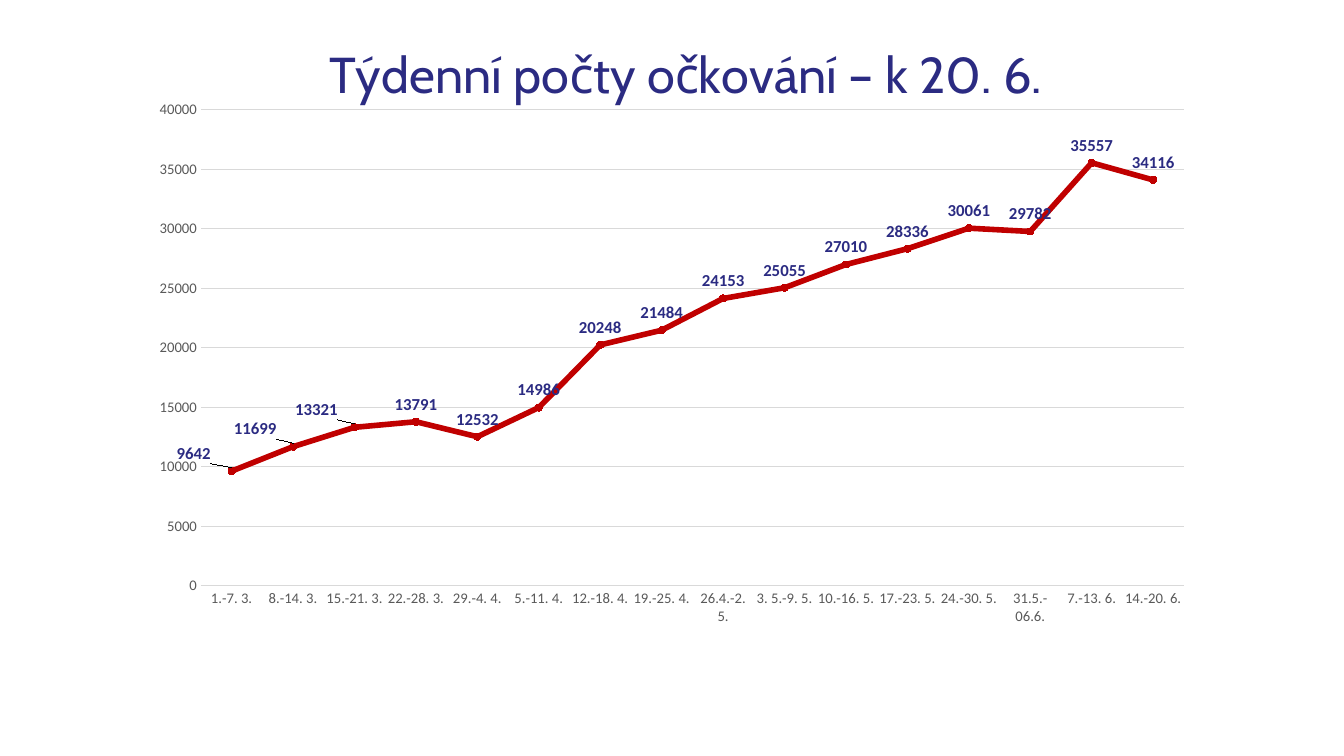
from dataclasses import dataclass

from lxml.etree import SubElement
from pptx import Presentation
from pptx.chart.data import CategoryChartData
from pptx.dml.color import RGBColor
from pptx.enum.chart import XL_CHART_TYPE as ChartType
from pptx.enum.chart import XL_LABEL_POSITION as LabelPosition
from pptx.enum.chart import XL_MARKER_STYLE as MarkerStyle
from pptx.enum.chart import XL_TICK_MARK as TickMark
from pptx.oxml.ns import qn
from pptx.util import Pt


@dataclass(frozen=True)
class Theme:
    """Colours, fonts and type sizes of the deck."""
    navy: RGBColor = RGBColor.from_string("2B2B82")
    red: RGBColor = RGBColor.from_string("C00000")
    grey: RGBColor = RGBColor.from_string("595959")
    rule: RGBColor = RGBColor.from_string("D9D9D9")
    heading_font: str = "Cabin"
    body_font: str = "Calibri"
    title_size: float = 36
    label_size: float = 12
    axis_size: float = 10.5
    rule_width: float = 0.75
    series_width: float = 4


@dataclass(frozen=True)
class Box:
    """A rectangle in px."""
    left: int
    top: int
    width: int
    height: int


THEME = Theme()
PX_PER_INCH = 100.8
PAGE = Box(0, 0, 1344, 756)
CHART_BOX = Box(138, 0, 1067, 639)
PLOT_BOX = Box(63, 110, 983, 476)
TITLE_LEFT, TITLE_TOP = 182, 30
LABEL_SHIFT = -38
SHIFTED_POINTS = range(3)

TITLE = "Týdenní počty očkování – k 20. 6."
WEEKLY_COUNTS = {
    "1.-7. 3.": 9642, "8.-14. 3.": 11699, "15.-21. 3.": 13321,
    "22.-28. 3.": 13791, "29.-4. 4.": 12532, "5.-11. 4.": 14986,
    "12.-18. 4.": 20248, "19.-25. 4.": 21484, "26.4.-2. 5.": 24153,
    "3. 5.-9. 5.": 25055, "10.-16. 5.": 27010, "17.-23. 5.": 28336,
    "24.-30. 5.": 30061, "31.5.-06.6.": 29782, "7.-13. 6.": 35557,
    "14.-20. 6.": 34116,
}


def px(length):
    """Turn px into EMU."""
    return round(length * 914400 / PX_PER_INCH)


def style_font(font, name, size, color, bold=False):
    """Set the face, size, weight and colour of a font."""
    values = {"name": name, "size": Pt(size), "bold": bold}
    for key, value in values.items():
        setattr(font, key, value)
    font.color.rgb = color


def style_line(line, color, width):
    """Set the colour and width of a line."""
    line.color.rgb = color
    line.width = Pt(width)


def place(element, index, values):
    """Give a chart element a manual layout at the given child index."""
    for old in element.findall(qn("c:layout")):
        element.remove(old)
    layout = SubElement(element, qn("c:layout"))
    element.insert(index, layout)
    manual = SubElement(layout, qn("c:manualLayout"))
    for key, value in values.items():
        SubElement(manual, qn(f"c:{key}")).set("val", str(value))


def add_title(chart, box):
    """Write the chart title above the plot."""
    frame = chart.chart_title.text_frame
    frame.text = TITLE
    style_font(frame.paragraphs[0].runs[0].font, THEME.heading_font,
               THEME.title_size, THEME.navy)
    place(chart.chart_title.element, 1, {
        "xMode": "edge", "yMode": "edge",
        "x": round(TITLE_LEFT / box.width, 4),
        "y": round(TITLE_TOP / box.height, 4)})


def format_axes(chart):
    """Format both axes and the gridlines."""
    for axis in (chart.category_axis, chart.value_axis):
        axis.major_tick_mark = axis.minor_tick_mark = TickMark.NONE
        style_font(axis.tick_labels.font, THEME.body_font, THEME.axis_size, THEME.grey)
    style_line(chart.category_axis.format.line, THEME.rule, THEME.rule_width)
    values = {"minimum_scale": 0, "maximum_scale": 40000, "major_unit": 5000,
              "has_major_gridlines": True}
    for key, value in values.items():
        setattr(chart.value_axis, key, value)
    chart.value_axis.format.line.fill.background()
    style_line(chart.value_axis.major_gridlines.format.line, THEME.rule, THEME.rule_width)


def format_series(series, box):
    """Format the line, its markers and its value labels."""
    series.smooth = False
    style_line(series.format.line, THEME.red, THEME.series_width)
    marker = series.marker
    marker.style, marker.size = MarkerStyle.CIRCLE, 5
    marker.format.fill.solid()
    marker.format.fill.fore_color.rgb = THEME.red
    marker.format.line.color.rgb = THEME.red
    series.data_labels.show_value = True
    point_labels = [series.points[index].data_label for index in SHIFTED_POINTS]
    for labels in (series.data_labels, *point_labels):
        style_font(labels.font, THEME.body_font, THEME.label_size, THEME.navy, True)
        labels.position = LabelPosition.ABOVE
    for label in series._element.iter(qn("c:dLbl")):
        place(label, 1, {"x": round(LABEL_SHIFT / box.width, 4), "y": 0})


def add_weekly_chart(page, box):
    """Add the line chart of weekly counts to the box."""
    data = CategoryChartData()
    data.categories = list(WEEKLY_COUNTS)
    data.add_series("Series 1", list(WEEKLY_COUNTS.values()))
    chart = page.shapes.add_chart(
        ChartType.LINE_MARKERS, px(box.left), px(box.top),
        px(box.width), px(box.height), data).chart
    chart.has_legend = False
    style_font(chart.font, THEME.body_font, THEME.axis_size, THEME.grey)
    plot = chart.plots[0]
    plot.vary_by_categories = False
    add_title(chart, box)
    format_axes(chart)
    format_series(plot.series[0], box)
    place(chart._chartSpace.chart.plotArea, 0, {
        "layoutTarget": "inner", "xMode": "edge", "yMode": "edge",
        "x": round(PLOT_BOX.left / box.width, 4),
        "y": round(PLOT_BOX.top / box.height, 4),
        "w": round(PLOT_BOX.width / box.width, 4),
        "h": round(PLOT_BOX.height / box.height, 4)})


def main():
    """Build and save the deck."""
    deck = Presentation()
    deck.slide_width, deck.slide_height = px(PAGE.width), px(PAGE.height)
    page = deck.slides.add_slide(deck.slide_layouts[6])
    add_weekly_chart(page, CHART_BOX)
    deck.save("out.pptx")


if __name__ == "__main__":
    main()
